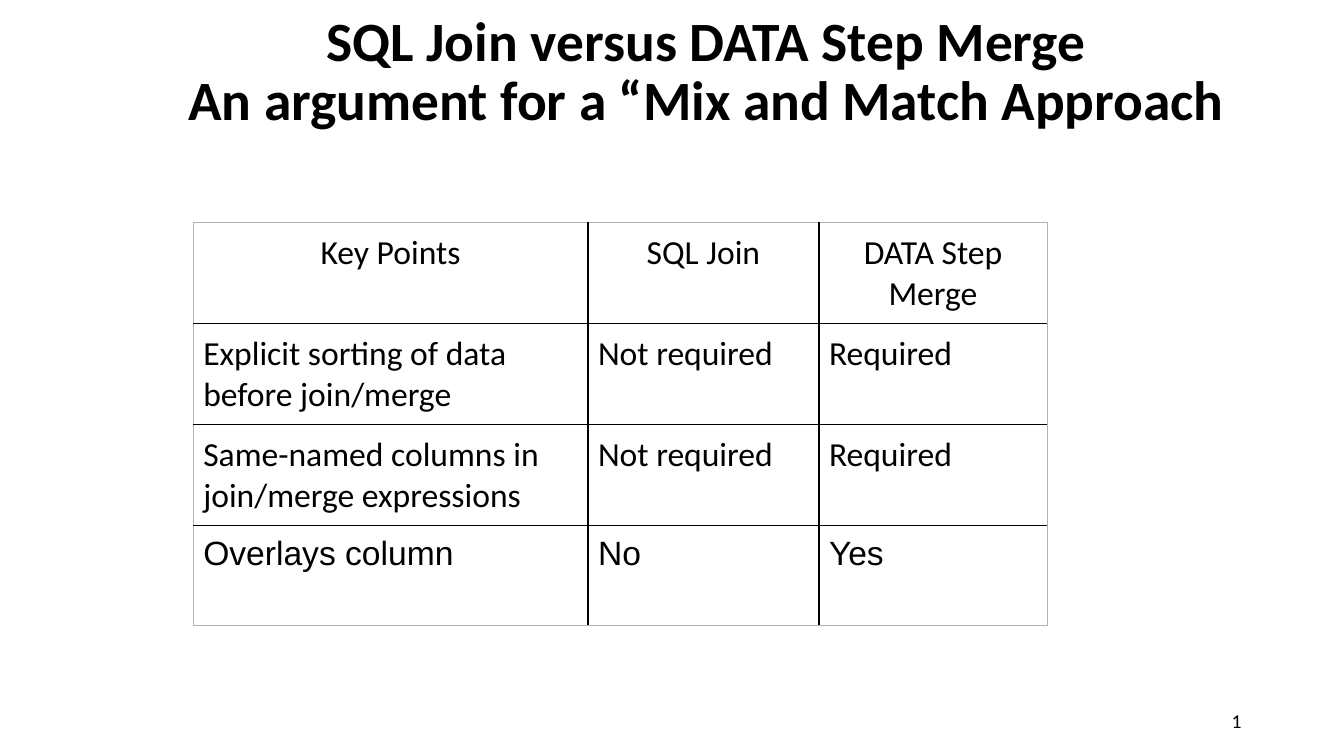
from lxml import etree
from pptx import Presentation
from pptx.dml.color import RGBColor
from pptx.enum.text import MSO_ANCHOR, PP_ALIGN
from pptx.oxml.ns import qn
from pptx.util import Pt

LEFT, CENTER, RIGHT = PP_ALIGN.LEFT, PP_ALIGN.CENTER, PP_ALIGN.RIGHT
MIDDLE = MSO_ANCHOR.MIDDLE

ROWS = [
    ("Key Points", "SQL Join", "DATA Step Merge"),
    ("Explicit sorting of data before join/merge", "Not required", "Required"),
    ("Same-named columns in join/merge expressions", "Not required", "Required"),
    ("Overlays column", "No", "Yes"),
]
WIDTHS = (282, 165, 163)


def color(code):
    return RGBColor.from_string(code)


def write(frame, text, font="Calibri", size=24, ink="000000", bold=False,
          align=LEFT, space=1.0):
    """Fill a text frame; a vertical tab in the text breaks the line."""
    para = frame.paragraphs[0]
    para.text = text
    para.alignment = align
    para.line_spacing = space
    for run in para.runs:
        run.font.name = font
        run.font.size = Pt(size)
        run.font.bold = bold
        run.font.color.rgb = color(ink)


class Page:
    ink = "000000"
    edge = "B2B2B2"
    pad = 7.2

    def __init__(self, deck):
        self.slide = deck.slides.add_slide(deck.slide_layouts[6])

    def text(self, box, text, **style):
        frame = self.slide.shapes.add_textbox(*map(Pt, box)).text_frame
        frame.word_wrap = True
        frame.vertical_anchor = MIDDLE
        write(frame, text, ink=self.ink, **style)

    def border(self, cell, side, code, width):
        props = cell._tc.get_or_add_tcPr()
        line = etree.SubElement(props, qn("a:" + side), w=str(Pt(width)))
        fill = etree.SubElement(line, qn("a:solidFill"))
        etree.SubElement(fill, qn("a:srgbClr"), val=code)

    def cell(self, cell, text, outer, **style):
        """Format one cell; outer names the sides on the table's rim."""
        cell.margin_left = cell.margin_right = Pt(self.pad)
        cell.margin_top = cell.margin_bottom = Pt(self.pad)
        for side in ("lnL", "lnR", "lnT", "lnB"):
            rim = side in outer
            self.border(cell, side, self.edge if rim else self.ink,
                        0.5 if rim else 1)
        cell.fill.background()
        write(cell.text_frame, text, ink=self.ink, **style)

    def table(self, left, top, widths, height, rows):
        last, end = len(rows) - 1, len(widths) - 1
        grid = self.slide.shapes.add_table(
            len(rows), len(widths), Pt(left), Pt(top),
            Pt(sum(widths)), Pt(height * len(rows))).table
        grid.first_row = grid.horz_banding = False
        for col, width in zip(grid.columns, widths):
            col.width = Pt(width)
        for r, row in enumerate(rows):
            for c, text in enumerate(row):
                rim = {"lnL": c == 0, "lnR": c == end,
                       "lnT": r == 0, "lnB": r == last}
                self.cell(grid.cell(r, c), text,
                          [side for side, hit in rim.items() if hit],
                          font="Arial" if r == last else "Calibri",
                          align=CENTER if r == 0 else LEFT)


def main():
    deck = Presentation()
    deck.slide_width, deck.slide_height = Pt(960), Pt(540)
    page = Page(deck)
    page.text((123, 0, 763, 104.4),
              "SQL Join versus DATA Step Merge\v"
              "An argument for a “Mix and Match Approach",
              size=39.6, bold=True, align=CENTER, space=0.9)
    page.table(138, 159, WIDTHS, 71.5, ROWS)
    page.text((678, 500.4, 216, 28.8), "1", size=14, align=RIGHT)
    deck.save("out.pptx")


if __name__ == "__main__":
    main()
